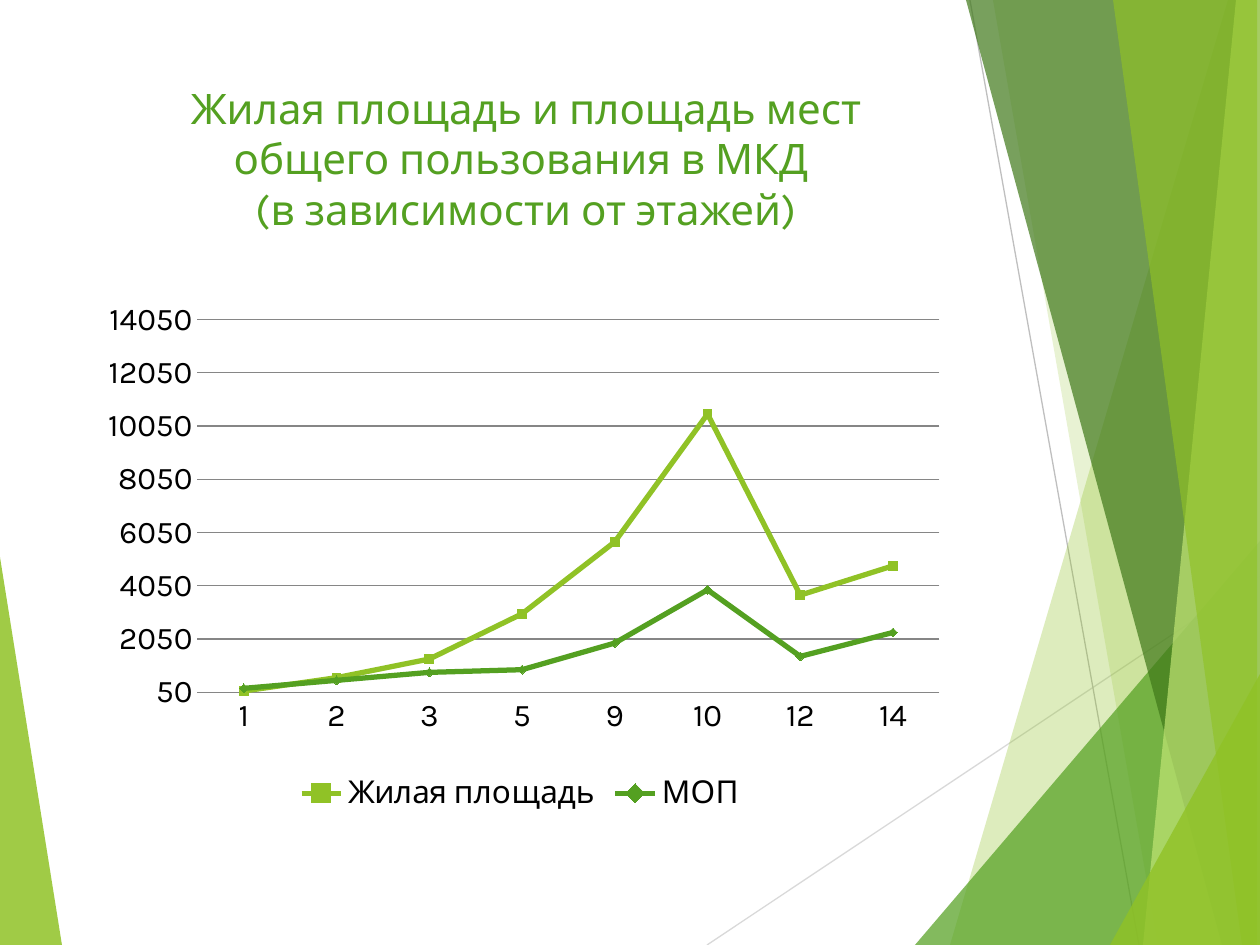
from lxml import etree
from pptx import Presentation
from pptx import util as u
from pptx.chart.data import CategoryChartData
from pptx.dml.color import RGBColor
from pptx.enum import chart as ch, shapes, text
from pptx.oxml.ns import qn

# Content
TITLE = "Жилая площадь и площадь мест общего пользования в МКД \v(в зависимости от этажей)"
FLOORS = ["1", "2", "3", "5", "9", "10", "12", "14"]
AREAS = [
    ("Жилая площадь", [100, 600, 1300, 3000, 5700, 10500, 3700, 4800]),
    ("МОП", [200, 500, 800, 900, 1900, 3900, 1400, 2300]),
]

# Theme
THEME = dict(font="Karla", title_size=24, chart_size=18, lime="90C226", green="54A021",
             dark="3F7819", pale="C0E474", black="000000", grid="868686",
             ray_light="D9D9D9", ray="BFBFBF")
SERIES_STYLE = [("lime", ch.XL_MARKER_STYLE.SQUARE), ("green", ch.XL_MARKER_STYLE.DIAMOND)]

# Geometry in px
W, H = 1260, 945
PX = 914400 / 126
TITLE_BOX = (134, 76, 784, 179)
CHART_BOX = (84, 265, 873, 553)
PLOT = dict(x=0.13, y=0.053, w=0.85, h=0.72)
RAYS = [((707, H), (W, 576), "ray_light"), ((970, 0), (1139, H), "ray")]


def band(top, bottom, right=W):
    """Facet from a slanted left edge to a vertical right edge."""
    return [(top, 0), (bottom, H), (right, H), (right, 0)]


def corner(left, top, side=W):
    """Triangle standing on the bottom edge against one side."""
    return [(left, H), (side, top), (side, H)]


FACETS = [  # outline, colour, opacity in percent
    (corner(62, 557, 0), "lime", 85),
    (band(1228, 950), "lime", 30),
    (band(993, 1158), "lime", 20),
    (corner(915, 541), "green", 72),
    (band(966, 1222), "dark", 70),
    (band(1236, 1143), "pale", 70),
    (band(1113, 1242, 1257), "lime", 65),
    (corner(1110, 674), "lime", 80),
]


def emu(*values):
    return [u.Emu(round(v * PX)) for v in values]


def color(name):
    return RGBColor.from_string(THEME[name])


def style_font(font, size, name):
    font.name, font.size, font.bold = THEME["font"], u.Pt(THEME[size]), False
    font.color.rgb = color(name)


def write(tf, words, size, name, align):
    p = tf.paragraphs[0]
    p.text, p.alignment = words, align
    for r in p.runs:
        style_font(r.font, size, name)


def add_ray(slide, start, end, name):
    line = slide.shapes.add_connector(shapes.MSO_CONNECTOR.STRAIGHT, *emu(*start, *end))
    line.line.color.rgb, line.line.width = color(name), u.Pt(0.75)
    etree.SubElement(line._element.spPr, qn("a:effectLst"))


def add_facet(slide, points, name, opacity):
    builder = slide.shapes.build_freeform(*points[0], scale=PX)
    builder.add_line_segments(points[1:], close=True)
    sp = builder.convert_to_shape()
    sp.shadow.inherit = False
    sp.line.fill.background()
    sp.fill.solid()
    sp.fill.fore_color.rgb = color(name)
    clr = sp._element.spPr.find(".//" + qn("a:srgbClr"))
    etree.SubElement(clr, qn("a:alpha"), val=str(opacity * 1000))


def set_plot_layout(chart):
    area = chart._chartSpace.chart.plotArea
    for old in area.findall(qn("c:layout")):
        area.remove(old)
    layout = etree.Element(qn("c:layout"))
    area.insert(0, layout)
    manual = etree.SubElement(layout, qn("c:manualLayout"))
    fields = dict(layoutTarget="inner", xMode="edge", yMode="edge", **PLOT)
    for tag, val in fields.items():
        etree.SubElement(manual, qn("c:" + tag), val=str(val))


def add_area_chart(slide):
    data = CategoryChartData()
    data.categories = FLOORS
    for name, values in AREAS:
        data.add_series(name, values)
    chart = slide.shapes.add_chart(ch.XL_CHART_TYPE.LINE_MARKERS, *emu(*CHART_BOX), data).chart
    style_font(chart.font, "chart_size", "black")
    chart.has_title = False
    chart.has_legend = True
    chart.legend.position = ch.XL_LEGEND_POSITION.BOTTOM
    chart.legend.include_in_layout = False
    chart.plots[0].vary_by_categories = False
    set_plot_layout(chart)

    # Axes
    cat, val = chart.category_axis, chart.value_axis
    for axis in (cat, val):
        axis.major_tick_mark = axis.minor_tick_mark = ch.XL_TICK_MARK.NONE
    val.minimum_scale, val.maximum_scale, val.major_unit = 50, 15000, 2000
    val.has_major_gridlines = True
    val.format.line.fill.background()
    for line in (cat.format.line, val.major_gridlines.format.line):
        line.color.rgb, line.width = color("grid"), u.Pt(0.75)

    # Series
    for s, (name, marker) in zip(chart.plots[0].series, SERIES_STYLE):
        s.smooth = False
        s.format.line.color.rgb, s.format.line.width = color(name), u.Pt(3)
        s.marker.style, s.marker.size = marker, 5
        s.marker.format.fill.solid()
        s.marker.format.fill.fore_color.rgb = color(name)
        s.marker.format.line.color.rgb = color(name)


def main():
    prs = Presentation()
    prs.slide_width, prs.slide_height = emu(W, H)
    slide = prs.slides.add_slide(prs.slide_layouts[5])

    # Background facets and rays
    left_facet, *right_facets = FACETS
    add_facet(slide, *left_facet)
    for ray in RAYS:
        add_ray(slide, *ray)
    for facet in right_facets:
        add_facet(slide, *facet)

    # Title
    title = slide.shapes.title
    title.left, title.top, title.width, title.height = emu(*TITLE_BOX)
    tf = title.text_frame
    tf.word_wrap, tf.auto_size = True, text.MSO_AUTO_SIZE.NONE
    tf.vertical_anchor = text.MSO_ANCHOR.TOP
    write(tf, TITLE, "title_size", "green", text.PP_ALIGN.CENTER)

    add_area_chart(slide)
    prs.save("out.pptx")


if __name__ == "__main__":
    main()
